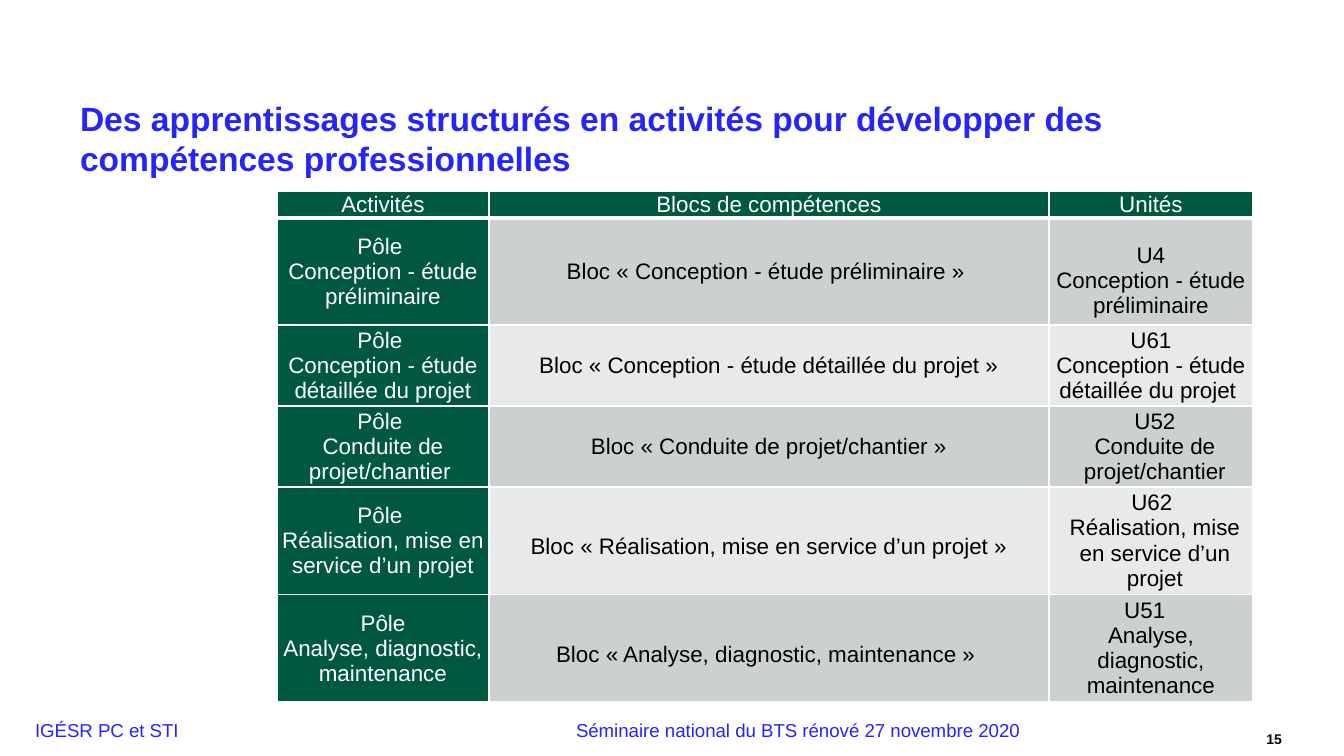
import pptx
import pptx.dml.color
import pptx.enum.text
import pptx.oxml.ns
import pptx.util
from dataclasses import dataclass
from lxml import etree

TITLE = "Des apprentissages structurés en activités pour développer des compétences professionnelles"
FOOTER = "IGÉSR PC et STI\tSéminaire national du BTS rénové 27 novembre 2020"
PAGE = "15"
HEADINGS = ["Activités", "Blocs de compétences", "Unités"]
# Each cell is a list of lines.
POLES = [
    (["Pôle ", "Conception - étude préliminaire"],
     ["Bloc « Conception - étude préliminaire » "],
     ["U4", "Conception - étude préliminaire"]),
    (["Pôle ", "Conception - étude détaillée du projet"],
     ["Bloc « Conception - étude détaillée du projet »"],
     ["U61", "Conception - étude détaillée du projet "]),
    (["Pôle ", "Conduite de projet/chantier "],
     ["Bloc « Conduite de projet/chantier »"],
     ["U52", "Conduite de projet/chantier"]),
    (["Pôle ", "Réalisation, mise en service d’un projet"],
     ["Bloc « Réalisation, mise en service d’un projet »"],
     ["U62 ", "Réalisation, mise en service d’un projet"]),
    (["Pôle", "Analyse, diagnostic, maintenance"],
     ["Bloc « Analyse, diagnostic, maintenance » "],
     ["U51  ", "Analyse, diagnostic, maintenance"]),
]

# Lengths in px
SLIDE = (1344, 756)
TABLE_LEFT, TABLE_TOP = 277, 191
COLUMN_WIDTHS = [212, 560, 204]
ROW_HEIGHTS = [27, 107, 81, 81, 107, 107]
CELL_MARGIN = 4
TOP_MARGINS = {(1, 2): 25, (4, 1): 12, (5, 1): 12}  # (row, column)
INDENTS = {(3, 2): 8, (4, 2): 8}
FOOTER_TAB = 541


@dataclass(frozen=True)
class Theme:
    font: str = "Arial"
    blue: str = "2424FF"
    green: str = "005841"
    tints: tuple = ("CCD1CF", "E7EAE9")
    white: str = "FFFFFF"
    black: str = "000000"
    title_size: float = 18
    table_size: float = 12
    footer_size: float = 10
    page_size: float = 7.5


THEME = Theme()
ALIGN = pptx.enum.text.PP_ALIGN
ANCHOR = pptx.enum.text.MSO_ANCHOR


def px(length):
    return pptx.util.Emu(round(length * 914400 / 134.4))


def rgb(color):
    return pptx.dml.color.RGBColor.from_string(color)


def add_element(parent, tag, **attributes):
    return etree.SubElement(parent, pptx.oxml.ns.qn(tag), **attributes)


def write(frame, lines, *, size, color, bold=False, align=ALIGN.LEFT, indent=0, tab=None):
    """Put one paragraph per line into a text frame."""
    frame.word_wrap = True
    for index, line in enumerate(lines):
        paragraph = frame.add_paragraph() if index else frame.paragraphs[0]
        paragraph.alignment = align
        properties = paragraph._p.get_or_add_pPr()
        if indent:
            properties.set("marL", str(px(indent)))
        if tab:
            stops = add_element(properties, "a:tabLst")
            add_element(stops, "a:tab", pos=str(px(tab)), algn="l")
        run = paragraph.add_run()
        run.text = line
        run.font.name = THEME.font
        run.font.size = pptx.util.Pt(size)
        run.font.bold = bold
        run.font.color.rgb = rgb(color)


def place(shape, left, top, width, height):
    shape.left, shape.top, shape.width, shape.height = map(px, (left, top, width, height))


def set_margins(target, left, top, right, bottom):
    target.margin_left, target.margin_top = px(left), px(top)
    target.margin_right, target.margin_bottom = px(right), px(bottom)


def add_borders(cell, bottom_width):
    properties = cell._tc.get_or_add_tcPr()
    for tag, width in (("a:lnL", 1), ("a:lnR", 1), ("a:lnT", 1), ("a:lnB", bottom_width)):
        line = add_element(properties, tag, w=str(pptx.util.Pt(width)))
        fill = add_element(line, "a:solidFill")
        add_element(fill, "a:srgbClr", val=THEME.white)


def add_title(slide):
    title = slide.shapes.title
    place(title, 70, 101, 1145, 74)
    title.fill.solid()
    title.fill.fore_color.rgb = rgb(THEME.white)
    frame = title.text_frame
    frame.auto_size = pptx.enum.text.MSO_AUTO_SIZE.NONE
    frame.vertical_anchor = ANCHOR.MIDDLE
    set_margins(frame, 10, 5, 10, 5)
    write(frame, [TITLE], size=THEME.title_size, color=THEME.blue, bold=True)


def add_poles_table(slide):
    rows = [[[heading] for heading in HEADINGS], *POLES]
    table = slide.shapes.add_table(
        len(rows), len(HEADINGS), px(TABLE_LEFT), px(TABLE_TOP),
        px(sum(COLUMN_WIDTHS)), px(sum(ROW_HEIGHTS))).table
    for column, width in zip(table.columns, COLUMN_WIDTHS):
        column.width = px(width)
    for row, height in zip(table.rows, ROW_HEIGHTS):
        row.height = px(height)
    for r, row in enumerate(rows):
        for c, lines in enumerate(row):
            cell = table.cell(r, c)
            is_heading = r == 0 or c == 0
            add_borders(cell, 3 if r == 0 else 1)
            cell.fill.solid()
            cell.fill.fore_color.rgb = rgb(THEME.green if is_heading else THEME.tints[(r - 1) % 2])
            cell.vertical_anchor = ANCHOR.TOP if (r, c) == (1, 2) else ANCHOR.MIDDLE
            set_margins(cell, CELL_MARGIN, TOP_MARGINS.get((r, c), 0), CELL_MARGIN, 0)
            write(cell.text_frame, lines, size=THEME.table_size,
                  color=THEME.white if is_heading else THEME.black,
                  align=ALIGN.CENTER, indent=INDENTS.get((r, c), 0))


def add_footer(slide):
    footer = slide.shapes.add_textbox(px(22), px(712), px(1040), px(36)).text_frame
    set_margins(footer, 13, 7, 0, 7)
    write(footer, [FOOTER], size=THEME.footer_size, color=THEME.blue, tab=FOOTER_TAB)
    page = slide.shapes.add_textbox(px(1083), px(721), px(199), px(36)).text_frame
    set_margins(page, 0, 0, 0, 0)
    page.vertical_anchor = ANCHOR.MIDDLE
    write(page, [PAGE], size=THEME.page_size, color=THEME.black, bold=True, align=ALIGN.RIGHT)


def main():
    deck = pptx.Presentation()
    deck.slide_width, deck.slide_height = map(px, SLIDE)
    slide = deck.slides.add_slide(deck.slide_layouts.get_by_name("Title Only"))
    add_footer(slide)
    add_poles_table(slide)
    add_title(slide)
    deck.save("out.pptx")


if __name__ == "__main__":
    main()
